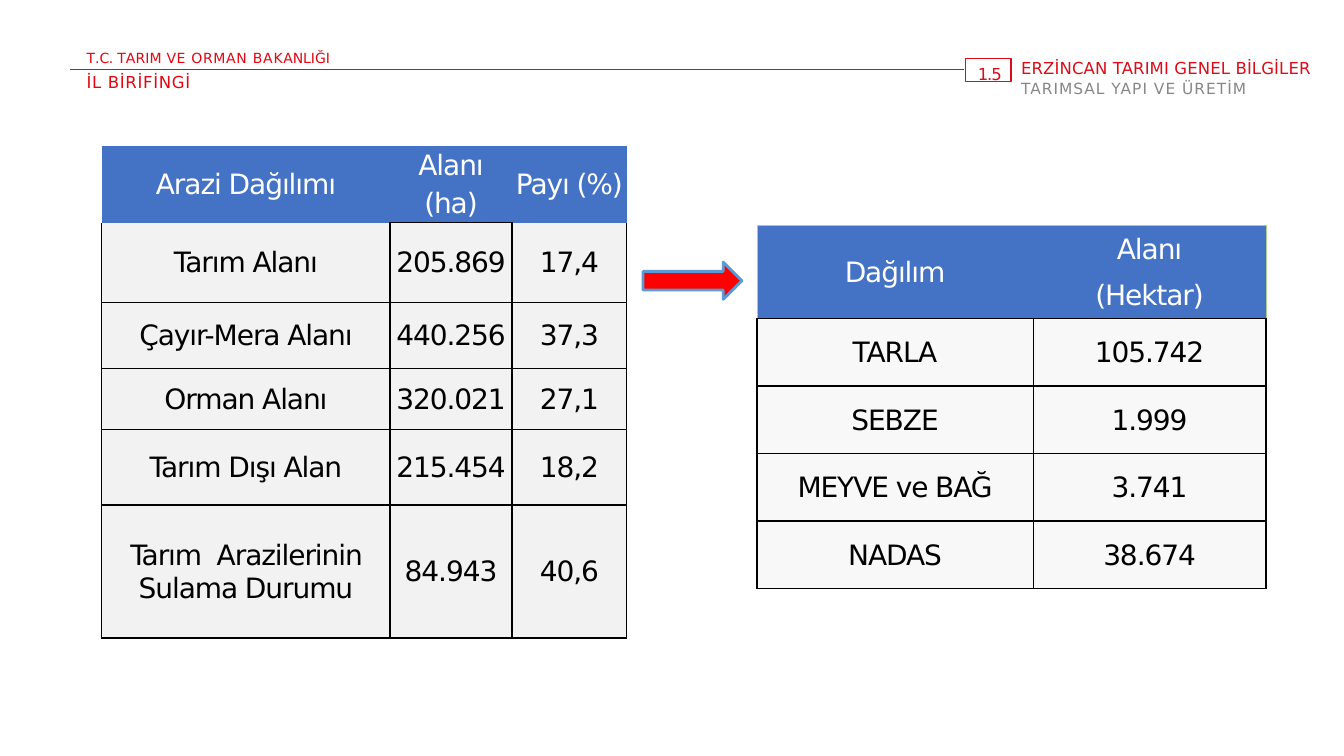
from dataclasses import dataclass

from lxml.etree import SubElement
from pptx import Presentation
from pptx.dml.color import RGBColor as Rgb
from pptx.enum.shapes import MSO_CONNECTOR as Link, MSO_SHAPE as Preset
from pptx.enum.text import MSO_ANCHOR as Anchor, PP_ALIGN as Align
from pptx.oxml.ns import qn
from pptx.util import Emu, Pt


@dataclass(frozen=True)
class Theme:
    font: str = "DejaVu Sans"
    ministry: str = "E30613"
    accent: str = "DC0C18"
    muted: str = "878787"
    header: str = "4472C4"
    header_edge: str = "A9D08E"
    land_body: str = "F2F2F2"
    crop_body: str = "F8F8F8"
    white: str = "FFFFFF"
    black: str = "000000"
    arrow: str = "FF0000"
    arrow_edge: str = "5B9BD5"
    small: float = 10
    subtitle: float = 11
    title: float = 11.8
    table: float = 20


THEME = Theme()
GRID_COLUMNS, GRID_ROWS = 160, 90
CELL_SIZE = 76200
NO_STYLE = "{2D5ABB26-0587-4C30-8999-92F81FD0307C}"
INSET = 0.12

MINISTRY = [("T", -0.7), (".", -1.4), ("C. ", -0.3), ("T", -0.6), ("ARIM ", 0.1),
            ("VE ORMAN ", 0.5), ("BA", 0.6), ("K", 0.4), ("ANLIĞI", 0)]

LAND_HEADER = [["Arazi Dağılımı", "Alanı", "Payı (%)"], ["", "(ha)", ""]]
LAND_AREAS = [
    ["Tarım Alanı", "205.869", "17,4"],
    ["Çayır-Mera Alanı", "440.256", "37,3"],
    ["Orman Alanı", "320.021", "27,1"],
    ["Tarım Dışı Alan", "215.454", "18,2"],
    ["Tarım  Arazilerinin Sulama Durumu", "84.943", "40,6"],
]
CROP_HEADER = [["Dağılım", "Alanı"], ["", "(Hektar)"]]
CROP_AREAS = [
    ["TARLA", "105.742"],
    ["SEBZE", "1.999"],
    ["MEYVE ve BAĞ", "3.741"],
    ["NADAS", "38.674"],
]


def grid(*units):
    return [Emu(round(unit * CELL_SIZE)) for unit in units]


def apply(target, values):
    for name, value in values.items():
        setattr(target, name, value)


def set_insets(target, left, top, right=0):
    names = ("margin_left", "margin_top", "margin_right", "margin_bottom")
    apply(target, dict(zip(names, grid(left, top, right, 0))))


def write(paragraph, pieces, size, color):
    for text, tracking in pieces:
        run = paragraph.add_run()
        run.text = text
        apply(run.font, {"name": THEME.font, "size": Pt(size)})
        run.font.color.rgb = Rgb.from_string(color)
        run._r.get_or_add_rPr().set("spc", str(round(tracking * 100)))


def fill_frame(frame, lines, left=INSET, top=0.24):
    apply(frame, {"word_wrap": True, "vertical_anchor": Anchor.TOP})
    set_insets(frame, left, top)
    for index, line in enumerate(lines):
        paragraph = frame.add_paragraph() if index else frame.paragraphs[0]
        paragraph.alignment = Align.LEFT
        if index:
            paragraph.space_before = Pt(0.8)
        write(paragraph, *line)


def add_label(slide, box, *lines):
    fill_frame(slide.shapes.add_textbox(*grid(*box)).text_frame, lines)


def set_outline(part, color, width):
    part.line.color.rgb = Rgb.from_string(color)
    part.line.width = Pt(width)


def add_rule(slide, start, end):
    rule = slide.shapes.add_connector(Link.STRAIGHT, *grid(*start, *end))
    set_outline(rule, THEME.accent, 0.82)
    SubElement(rule._element.spPr, qn("a:effectLst"))


def add_preset(slide, preset, box, edge, width, fill=None):
    shape = slide.shapes.add_shape(preset, *grid(*box))
    shape.shadow.inherit = False
    set_outline(shape, edge, width)
    if fill:
        shape.fill.solid()
        shape.fill.fore_color.rgb = Rgb.from_string(fill)
    else:
        shape.fill.background()
    return shape


def set_borders(cell, sides, color, width):
    for side in sides:
        line = SubElement(cell._tc.get_or_add_tcPr(), qn(f"a:ln{side}"), w=str(Pt(width)))
        SubElement(SubElement(line, qn("a:solidFill")), qn("a:srgbClr"), val=color)


def style_cell(cell, text, fill, color):
    cell.vertical_anchor = Anchor.MIDDLE
    set_insets(cell, INSET, INSET, INSET)
    cell.fill.solid()
    cell.fill.fore_color.rgb = Rgb.from_string(fill)
    paragraph = cell.text_frame.paragraphs[0]
    paragraph.alignment = Align.CENTER
    if text:
        write(paragraph, [(text, -0.8)], THEME.table, color)


def header_sides(row, column, last):
    edges = {"L": column == 0, "R": column == last, "T": row == 0}
    return [side for side, outer in edges.items() if outer]


def add_area_table(slide, origin, widths, heights, header, body, body_fill, top_columns, edge=None):
    rows = header + body
    frame = slide.shapes.add_table(len(rows), len(widths),
                                   *grid(*origin, sum(widths), sum(heights)))
    table = frame.table
    apply(table, {"first_row": False, "horz_banding": False})
    table._tbl.tblPr.find(qn("a:tableStyleId")).text = NO_STYLE
    for column, width in zip(table.columns, grid(*widths)):
        column.width = width
    for row, height in zip(table.rows, grid(*heights)):
        row.height = height
    for r, texts in enumerate(rows):
        for c, text in enumerate(texts):
            cell = table.cell(r, c)
            if r < len(header):
                if edge:
                    set_borders(cell, header_sides(r, c, len(widths) - 1), edge, 0.5)
                style_cell(cell, text, THEME.header, THEME.white)
            else:
                topped = r > len(header) or c in top_columns
                set_borders(cell, "LRTB" if topped else "LRB", THEME.black, 1)
                style_cell(cell, text, body_fill, THEME.black)
    for c, text in enumerate(header[1]):
        if not text:
            table.cell(0, c).merge(table.cell(1, c))


def add_page_header(slide):
    add_label(slide, (10.2, 5.64, 29.4, 2.16), (MINISTRY, THEME.small, THEME.ministry))
    add_label(slide, (10.2, 8.28, 30.48, 2.52),
              ([("İL BİRİFİNGİ", 0.5)], THEME.title, THEME.ministry))
    add_rule(slide, (8.28, 8.25), (114.72, 8.25))
    add_label(slide, (121.44, 6.72, 36.72, 5.04),
              ([("ERZİNCAN TARIMI GENEL BİLGİLER", 0.1)], THEME.title, THEME.accent),
              ([("TARIMSAL YAPI VE ÜRETİM", 0.7)], THEME.subtitle, THEME.muted))
    badge = add_preset(slide, Preset.RECTANGLE, (114.96, 6.96, 5.4, 2.76), THEME.accent, 0.82)
    fill_frame(badge.text_frame, [([("1.5", -0.7)], THEME.title, THEME.accent)], 1.44, 0.7)


def main():
    deck = Presentation()
    deck.slide_width, deck.slide_height = grid(GRID_COLUMNS, GRID_ROWS)
    slide = deck.slides.add_slide(deck.slide_layouts[6])
    add_page_header(slide)
    add_area_table(slide, (12.12, 17.4), [34.32, 14.52, 13.68],
                   [4.56, 4.56, 9.48, 7.92, 7.2, 9, 15.84],
                   LAND_HEADER, LAND_AREAS, THEME.land_body, [1])
    add_area_table(slide, (90.12, 26.88), [32.88, 27.72],
                   [5.52] * len(CROP_HEADER) + [8.04] * len(CROP_AREAS),
                   CROP_HEADER, CROP_AREAS, THEME.crop_body, [0, 1], THEME.header_edge)
    add_preset(slide, Preset.RIGHT_ARROW, (76.56, 31.2, 11.76, 4.44),
               THEME.arrow_edge, 2, THEME.arrow)
    deck.save("out.pptx")


if __name__ == "__main__":
    main()
